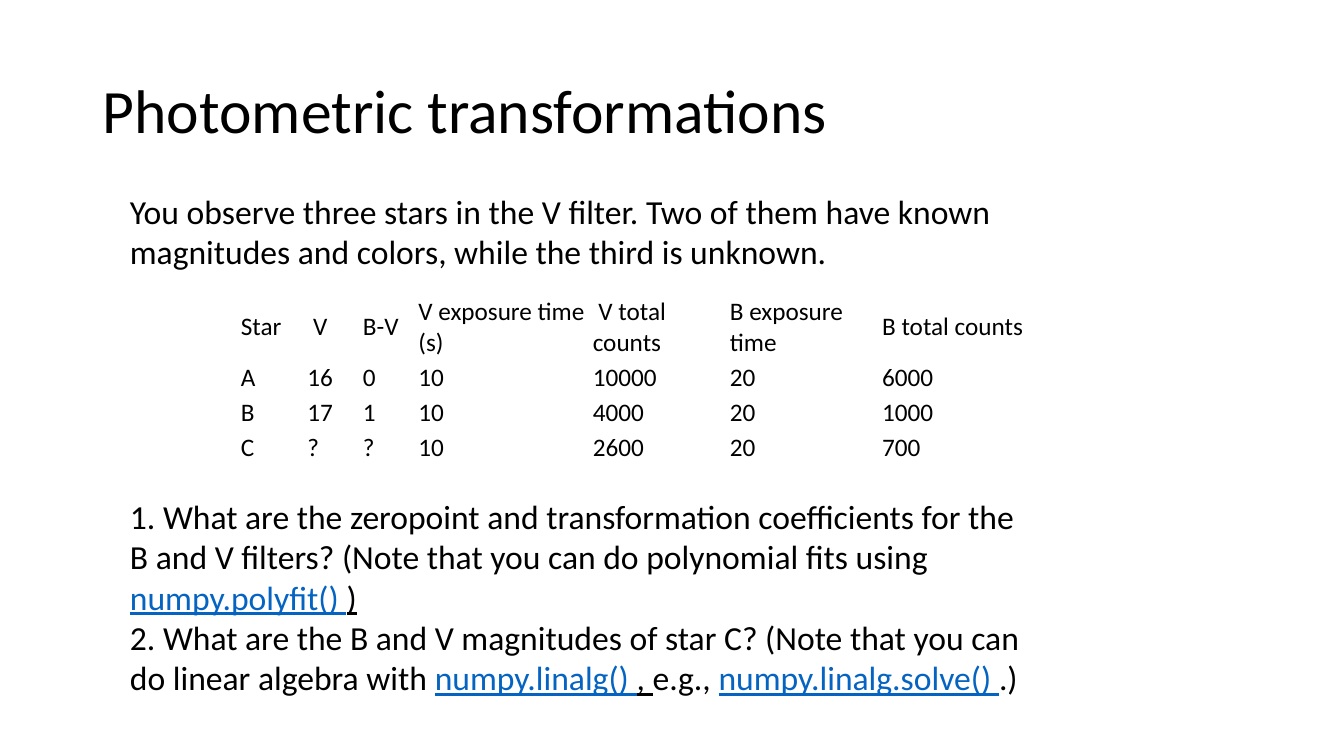
import pptx
import pptx.util
import pptx.dml.color
import pptx.enum.text
from pptx.util import Inches

COLORS = {"text": "000000", "link": "0563C1", "paper": "FFFFFF"}
FONT = "Calibri"
LINK = {"color": "link", "underline": True}
MARKED = {"underline": True}

TITLE = "Photometric transformations"
INTRO = [[("You observe three stars in the V filter. Two of them have known "
           "magnitudes and colors, while the third is unknown.", {})]]
QUESTIONS = [
    [("1. What are the zeropoint and transformation coefficients for the B and V "
      "filters? (Note that you can do polynomial fits using ", {}),
     ("numpy.polyfit() ", LINK), (")", MARKED)],
    [("2. What are the B and V magnitudes of star C? (Note that you can do linear "
      "algebra with ", {}),
     ("numpy.linalg() ", LINK), (", ", MARKED), ("e.g., ", {}),
     ("numpy.linalg.solve() ", LINK), (".)", {})],
]
STARS = [
    ["Star", " V", "B-V", "V exposure time (s)", " V total counts",
     "B exposure time", "B total counts"],
    ["A", "16", "0", "10", "10000", "20", "6000"],
    ["B", "17", "1", "10", "4000", "20", "1000"],
    ["C", "?", "?", "10", "2600", "20", "700"],
]
COL_WIDTHS = [0.66, 0.55, 0.55, 1.73, 1.36, 1.51, 1.66]
HEADER_HEIGHT, ROW_HEIGHT = 0.63, 0.35
CELL_MARGIN = Inches(0.02)


def rgb(name):
    return pptx.dml.color.RGBColor.from_string(COLORS[name])


def add_text(p, text, size=24, color="text", underline=False):
    r = p.add_run()
    r.text = text
    f = r.font
    f.name, f.size, f.bold, f.underline = FONT, pptx.util.Pt(size), False, underline
    f.color.rgb = rgb(color)


def add_prose(s, paragraphs, left, top, width, height):
    """Add a wrapping text box of paragraphs, each a list of (text, format)."""
    box = s.shapes.add_textbox(*map(Inches, (left, top, width, height)))
    tf = box.text_frame
    tf.word_wrap = True
    for i, runs in enumerate(paragraphs):
        p = tf.add_paragraph() if i else tf.paragraphs[0]
        for text, style in runs:
            add_text(p, text, **style)


def add_title(s):
    title = s.shapes.title
    title.left, title.top, title.width, title.height = map(Inches, (0.92, 0.4, 11.5, 1.45))
    tf = title.text_frame
    tf.auto_size = pptx.enum.text.MSO_AUTO_SIZE.NONE
    tf.vertical_anchor = pptx.enum.text.MSO_ANCHOR.MIDDLE
    p = tf.paragraphs[0]
    p.alignment = pptx.enum.text.PP_ALIGN.LEFT
    p.line_spacing = 0.9
    add_text(p, TITLE, size=44)


def add_star_table(s):
    heights = [HEADER_HEIGHT] + [ROW_HEIGHT] * (len(STARS) - 1)
    table = s.shapes.add_table(
        len(STARS), len(COL_WIDTHS), Inches(2.37), Inches(2.92),
        Inches(sum(COL_WIDTHS)), Inches(sum(heights))).table
    table.first_row = table.horz_banding = False
    for column, width in zip(table.columns, COL_WIDTHS):
        column.width = Inches(width)
    for row, height, values in zip(table.rows, heights, STARS):
        row.height = Inches(height)
        for cell, value in zip(row.cells, values):
            cell.margin_left = cell.margin_right = CELL_MARGIN
            cell.margin_top = cell.margin_bottom = CELL_MARGIN
            cell.vertical_anchor = pptx.enum.text.MSO_ANCHOR.MIDDLE
            cell.fill.solid()
            cell.fill.fore_color.rgb = rgb("paper")
            add_text(cell.text_frame.paragraphs[0], value, size=18)


def main():
    prs = pptx.Presentation()
    prs.slide_width, prs.slide_height = Inches(13.33), Inches(7.5)
    s = prs.slides.add_slide(prs.slide_layouts[5])
    add_title(s)
    add_star_table(s)
    add_prose(s, INTRO, 1.19, 1.84, 9.83, 0.91)
    add_prose(s, QUESTIONS, 1.19, 4.87, 9.21, 2.12)
    prs.save("out.pptx")


if __name__ == "__main__":
    main()
